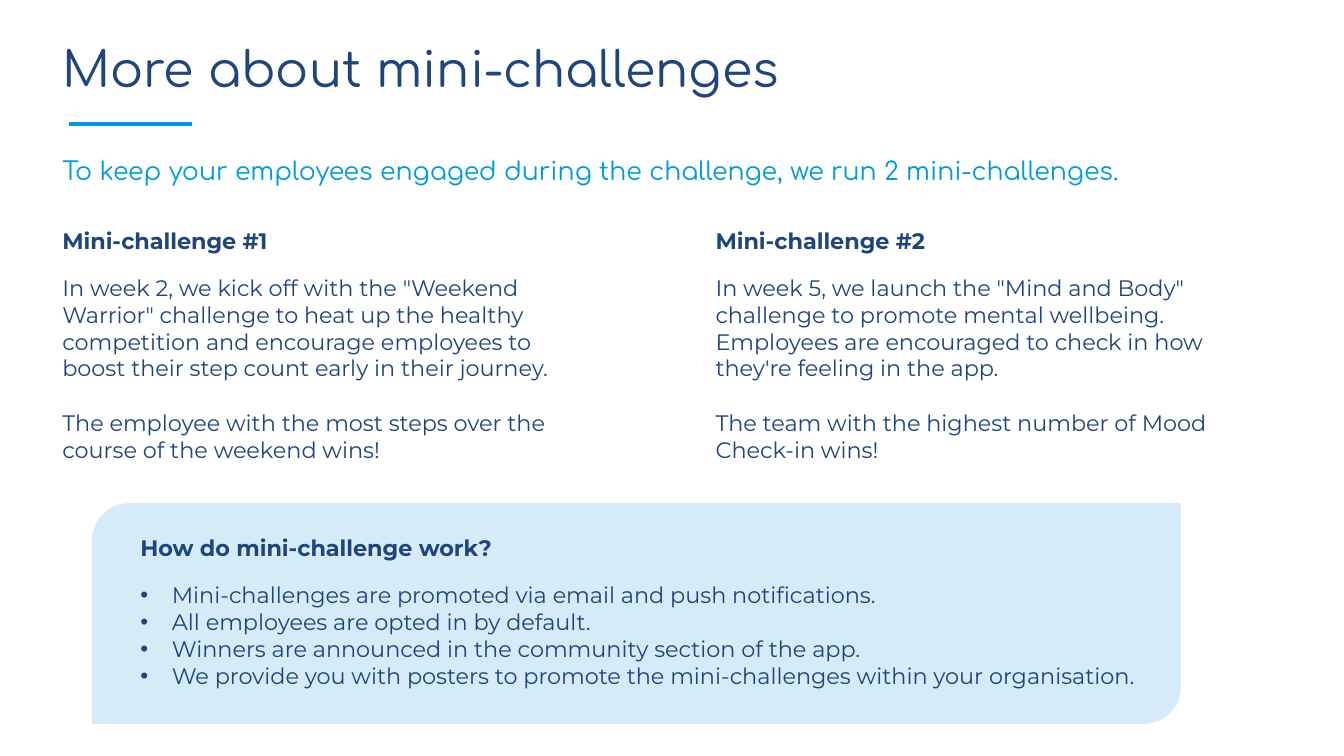
"""Builds the mini-challenges slide."""
from lxml import etree
from pptx import Presentation
from pptx import util as u
from pptx.dml.color import RGBColor
from pptx.enum import shapes, text
from pptx.oxml import ns

TITLE = "More about mini-challenges"
INTRO = "To keep your employees engaged during the challenge, we run 2 mini-challenges."
CHALLENGES = [
    ("Mini-challenge #1", [
        'In week 2, we kick off with the "Weekend Warrior" challenge to heat up the healthy '
        "competition and encourage employees to boost their step count early in their journey.",
        "The employee with the most steps over the course of the weekend wins!"]),
    ("Mini-challenge #2", [
        'In week 5, we launch the "Mind and Body" challenge to promote mental wellbeing. '
        "Employees are encouraged to check in how they're feeling in the app.",
        "The team with the highest number of Mood Check-in wins!"]),
]
HOW = ("How do mini-challenge work?", [
    "Mini-challenges are promoted via email and push notifications.",
    "All employees are opted in by default.",
    "Winners are announced in the community section of the app.",
    "We provide you with posters to promote the mini-challenges within your organisation."])

THEME = {
    "navy": RGBColor.from_string("1F457D"), "blue": RGBColor.from_string("009ADE"),
    "pale": RGBColor.from_string("D5EBF7"),
    "display": "Comfortaa", "body": "Montserrat",
    "title": 35, "intro": 18, "text": 16,
}
LEFT, COLUMN_STEP, COLUMN_TOP = 37.44, 466.56, 158.4
HEAD_GAP, PARA_GAP, INDENT = 14.6, 19.5, 22.5


def add_box(s, left, top, width, height):
    tf = s.shapes.add_textbox(*map(u.Pt, (left, top, width, height))).text_frame
    tf.word_wrap = True
    tf.vertical_anchor = text.MSO_ANCHOR.TOP
    return tf


def write(tf, words, size="text", font="body", color="navy", bold=False,
          before=0, spacing=1.0, bullet=False):
    p = tf.paragraphs[0] if not tf.text else tf.add_paragraph()
    p.space_before, p.line_spacing = u.Pt(before), spacing
    if bullet:
        pPr = p._p.get_or_add_pPr()
        pPr.set("marL", str(u.Pt(INDENT)))
        pPr.set("indent", str(-u.Pt(INDENT)))
        etree.SubElement(pPr, ns.qn("a:buFont")).set("typeface", "Arial")
        etree.SubElement(pPr, ns.qn("a:buChar")).set("char", "•")
    r = p.add_run()
    r.text = words
    r.font.name, r.font.size = THEME[font], u.Pt(THEME[size])
    r.font.bold, r.font.color.rgb = bold, THEME[color]


def write_section(tf, heading, items, gap, bullet=False):
    write(tf, heading, bold=True)
    for i, item in enumerate(items):
        write(tf, item, before=gap if i else HEAD_GAP, bullet=bullet)


def main():
    prs = Presentation()
    prs.slide_width, prs.slide_height = u.Pt(960), u.Pt(540)
    s = prs.slides.add_slide(prs.slide_layouts[6])

    write(add_box(s, LEFT, 28.8, 713.5, 34.6), TITLE, size="title", font="display", spacing=0.9)
    rule = s.shapes.add_connector(shapes.MSO_CONNECTOR.STRAIGHT,
                                  u.Pt(49), u.Pt(88.6), u.Pt(136.8), u.Pt(88.6))
    rule.line.color.rgb, rule.line.width = THEME["blue"], u.Pt(2.25)
    etree.SubElement(rule._element.spPr, ns.qn("a:effectLst"))
    write(add_box(s, LEFT, 107.3, 903, 51), INTRO, size="intro", font="display", color="blue")

    for i, (heading, items) in enumerate(CHALLENGES):
        tf = add_box(s, LEFT + i * COLUMN_STEP, COLUMN_TOP, 370, 177)
        write_section(tf, heading, items, PARA_GAP)

    panel = s.shapes.add_shape(shapes.MSO_SHAPE.ROUND_2_DIAG_RECTANGLE,
                               u.Pt(65.8), u.Pt(359.4), u.Pt(777.6), u.Pt(157.7))
    panel.shadow.inherit = False
    panel.fill.solid()
    panel.fill.fore_color.rgb = THEME["pale"]
    panel.line.fill.background()
    write_section(add_box(s, 93.2, 378, 764.6, 118.8), *HOW, gap=0, bullet=True)

    prs.save("out.pptx")


if __name__ == "__main__":
    main()
